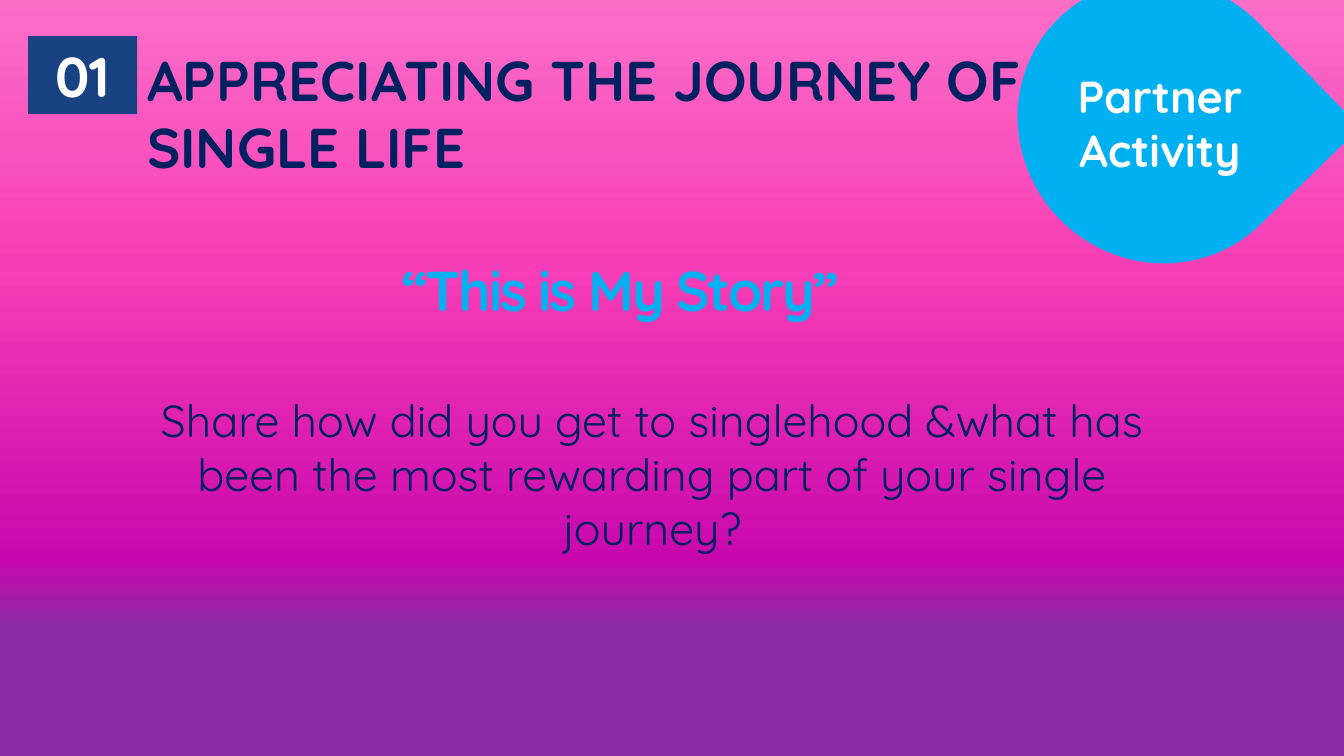
from pptx import Presentation
from pptx.dml.color import RGBColor
from pptx.enum import shapes, text
from pptx.oxml import parse_xml
from pptx.oxml.ns import nsdecls
from pptx.util import Inches, Pt

FONT = "Quicksand"
NAVY, BLUE, SKY, WHITE = "002060", "194282", "00B0F0", "FFFFFF"
STOPS = [(0, "FA6EC8"), (35, "F83EB6"), (74, "C808AD"), (83, "8B2AA6"), (100, "8B2AA6")]
LEFT, MID = text.PP_ALIGN.LEFT, text.PP_ALIGN.CENTER

TITLE = ("APPRECIATING THE JOURNEY OF SINGLE LIFE", (1.36, 0.4, 9.97, 1.45))
NUMBER = ("01", (0.28, 0.36, 1.08, 0.77))
TASK = ("Share how did you get to singlehood &what has been the most "
        "rewarding part of your single journey?", (1.34, 3.85, 10.26, 2.1))
STORY = ("“This is My Story”", (0.8, 2.49, 10.71, 0.77))
DROP = (10.07, -0.18, 2.86, 2.77)
BADGE = (("Partner", "Activity"), (10.25, 0.63, 2.51, 1.18))


def color(code):
    return RGBColor.from_string(code)


def write(shape, lines, size, code, bold=True, align=MID, gap=0):
    frame = shape.text_frame
    frame.word_wrap = True
    frame.auto_size = text.MSO_AUTO_SIZE.NONE
    frame.vertical_anchor = text.MSO_ANCHOR.TOP
    for i, line in enumerate(lines):
        para = frame.add_paragraph() if i else frame.paragraphs[0]
        para.alignment = align
        run = para.add_run()
        run.text = line
        font = run.font
        font.name, font.size, font.bold = FONT, Pt(size), bold
        font.color.rgb = color(code)
        if gap:
            run._r.get_or_add_rPr().set("spc", str(gap))


def box(area):
    return slide.shapes.add_textbox(*map(Inches, area))


def block(kind, area, code):
    shape = slide.shapes.add_shape(kind, *map(Inches, area))
    shape.shadow.inherit = False
    shape.fill.solid()
    shape.fill.fore_color.rgb = color(code)
    shape.line.fill.background()
    return shape


def paint(stops):
    fill = slide.background.fill
    fill.gradient()
    fill.gradient_angle = 270
    grad = slide.background._cSld.bg.bgPr.find(".//{*}gsLst")
    for old in list(grad):
        grad.remove(old)
    for pos, code in stops:
        grad.append(parse_xml(
            f'<a:gs {nsdecls("a")} pos="{pos * 1000}"><a:srgbClr val="{code}"/></a:gs>'))


deck = Presentation()
deck.slide_width, deck.slide_height = Inches(13.33), Inches(7.5)
slide = deck.slides.add_slide(deck.slide_layouts[5])
paint(STOPS)

title = slide.shapes.title
title.left, title.top, title.width, title.height = map(Inches, TITLE[1])
write(title, [TITLE[0]], 40, NAVY, align=LEFT)

write(block(shapes.MSO_SHAPE.RECTANGLE, NUMBER[1], BLUE), [NUMBER[0]], 40, WHITE)
write(box(TASK[1]), [TASK[0]], 32, NAVY, bold=False)
write(box(STORY[1]), [STORY[0]], 40, SKY, gap=-150)
block(shapes.MSO_SHAPE.TEAR, DROP, SKY).rotation = 45.8
write(box(BADGE[1]), BADGE[0], 32, WHITE)

deck.save("out.pptx")
